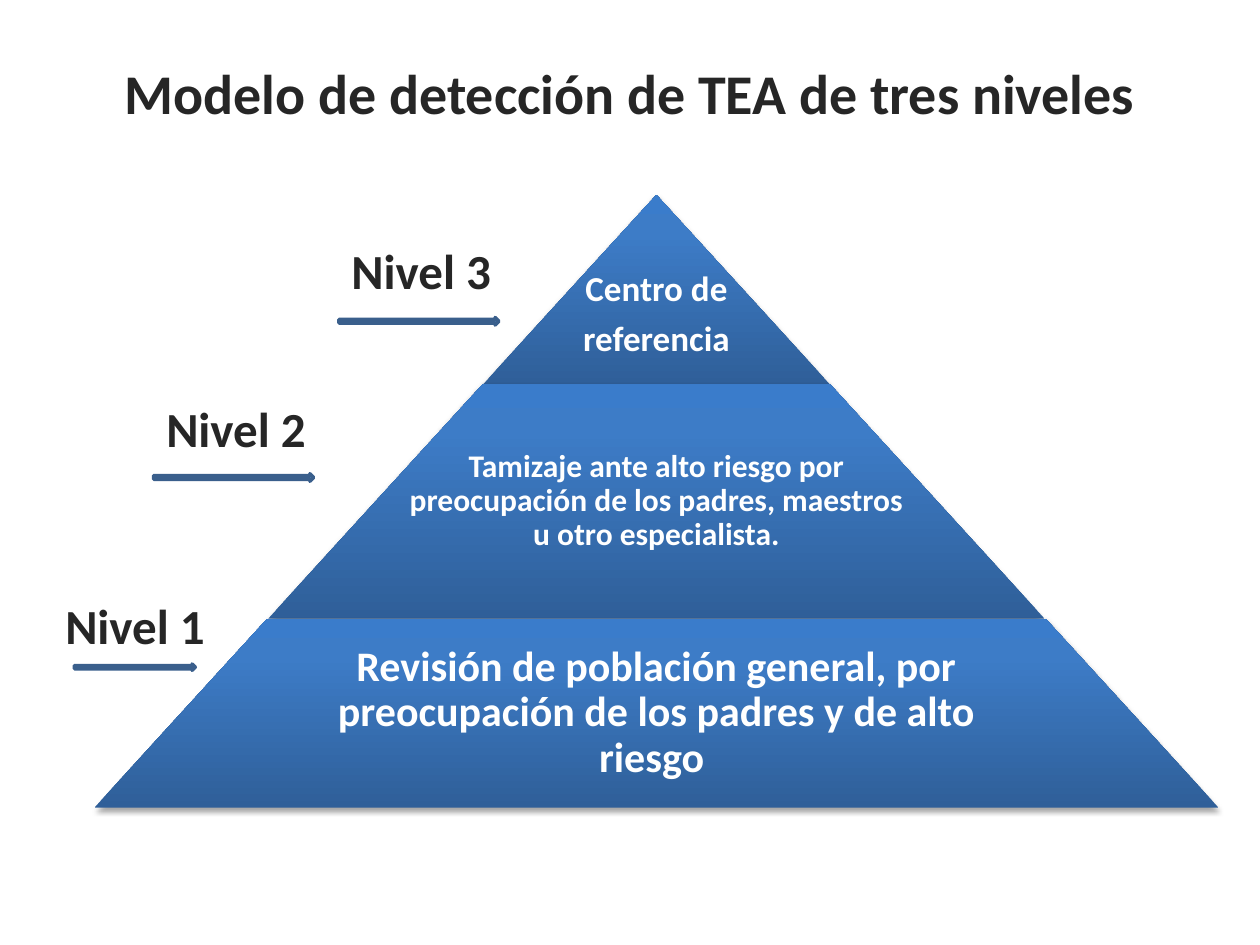
from pptx import Presentation
from pptx.dml.color import RGBColor
from pptx.enum.shapes import MSO_SHAPE
from pptx.enum.text import MSO_ANCHOR, PP_ALIGN
from pptx.oxml import parse_xml
from pptx.oxml.ns import nsdecls
from pptx.util import Inches, Pt

INK = "262626"
STOPS = [(0, "2F5F99"), (80, "3D7CC7"), (100, "3A7CCB")]
MID = 5.21
SLOPE = 0.915
TIERS = [
    (1.5, 2.75, 2.75, 20, ["Centro de", "referencia"], 0.43),
    (1.86, 6.16, 4.01, 18, ["Tamizaje ante alto riesgo por preocupación de los "
                            "padres, maestros u otro especialista."], 0.03),
    (1.5, 8.92, 5.8, 24, ["Revisión de población general, por preocupación de "
                          "los padres y de alto riesgo "], 0.03),
]
LEVELS = [
    ("Nivel 1", (0.42, 4.68, 2.5), 0.1, (0.59, 5.27, 0.96, 0.05)),
    ("Nivel 2", (1.04, 3.11, 2.34), 0.28, (1.22, 3.76, 1.27, 0.06)),
    ("Nivel 3", (2.51, 1.86, 2.34), 0.28, (2.69, 2.52, 1.27, 0.06)),
]


def color(code):
    """Turn a hex string into a colour."""
    return RGBColor.from_string(code)


def style(para, size, code):
    """Format every run of a paragraph."""
    for run in para.runs:
        font = run.font
        font.name, font.size, font.bold = "Calibri", Pt(size), True
        font.color.rgb = color(code)


def add_title(slide, text):
    """Place and fill the title."""
    title = slide.shapes.title
    title.left, title.top = Inches(0.5), Inches(0.3)
    title.width, title.height = Inches(9), Inches(0.87)
    frame = title.text_frame
    frame.text = text
    frame.vertical_anchor = MSO_ANCHOR.MIDDLE
    frame.paragraphs[0].alignment = PP_ALIGN.CENTER
    style(frame.paragraphs[0], 32, INK)


def shade(shape):
    """Give a shape the blue gradient and a soft shadow."""
    shape.line.fill.background()
    shape.shadow.inherit = False
    stops = "".join(f'<a:gs pos="{pos * 1000}"><a:srgbClr val="{code}"/></a:gs>'
                    for pos, code in STOPS)
    props = shape._element.spPr
    props.insert(2, parse_xml(
        f'<a:gradFill {nsdecls("a")} rotWithShape="1"><a:gsLst>{stops}</a:gsLst>'
        '<a:lin ang="16200000" scaled="0"/></a:gradFill>'))
    props[-1].append(parse_xml(
        f'<a:outerShdw {nsdecls("a")} blurRad="{Pt(3.1)}" dist="{Pt(1.8)}" '
        'dir="5400000" rotWithShape="0"><a:srgbClr val="000000">'
        '<a:alpha val="35000"/></a:srgbClr></a:outerShdw>'))


def add_tier(shapes, top, tall, wide, span, size, lines, inset):
    """Draw one pyramid tier with its text."""
    tier = shapes.add_shape(MSO_SHAPE.TRAPEZOID, Inches(MID - wide / 2),
                            Inches(top), Inches(wide), Inches(tall))
    tier.adjustments[0] = SLOPE
    shade(tier)
    box = shapes.add_textbox(Inches(MID - span / 2), Inches(top),
                             Inches(span), Inches(tall))
    frame = box.text_frame
    frame.word_wrap = True
    frame.vertical_anchor = MSO_ANCHOR.MIDDLE
    frame.margin_left = frame.margin_right = frame.margin_bottom = Inches(0.03)
    frame.margin_top = Inches(inset)
    frame.text = "\n".join(lines)
    for para in frame.paragraphs:
        para.alignment = PP_ALIGN.CENTER
        para.line_spacing = 0.9
        para.space_after = Pt(size * 0.35)
        style(para, size, "FFFFFF")


def add_arrow(shapes, spot):
    """Draw a thin block arrow."""
    arrow = shapes.add_shape(MSO_SHAPE.RIGHT_ARROW, *map(Inches, spot))
    arrow.shadow.inherit = False
    arrow.fill.solid()
    arrow.fill.fore_color.rgb = color("4F81BD")
    arrow.line.color.rgb = color("3A5F8C")
    arrow.line.width = Pt(2)


def add_label(shapes, text, spot, inset):
    """Write a level name."""
    box = shapes.add_textbox(*map(Inches, spot), Inches(0.57))
    frame = box.text_frame
    frame.word_wrap = True
    frame.margin_left = Inches(inset)
    frame.text = text
    style(frame.paragraphs[0], 28, INK)


def main():
    """Build the slide."""
    deck = Presentation()
    deck.slide_width, deck.slide_height = Inches(10), Inches(7.5)
    slide = deck.slides.add_slide(deck.slide_layouts[5])
    add_title(slide, "Modelo de detección de TEA de tres niveles")
    group = slide.shapes.add_group_shape()
    top = 1.55
    for tall, *rest in TIERS:
        add_tier(group.shapes, top, tall, *rest)
        top += tall
    for text, spot, inset, arrow in LEVELS:
        add_arrow(slide.shapes, arrow)
        add_label(slide.shapes, text, spot, inset)
    deck.save("out.pptx")


if __name__ == "__main__":
    main()
